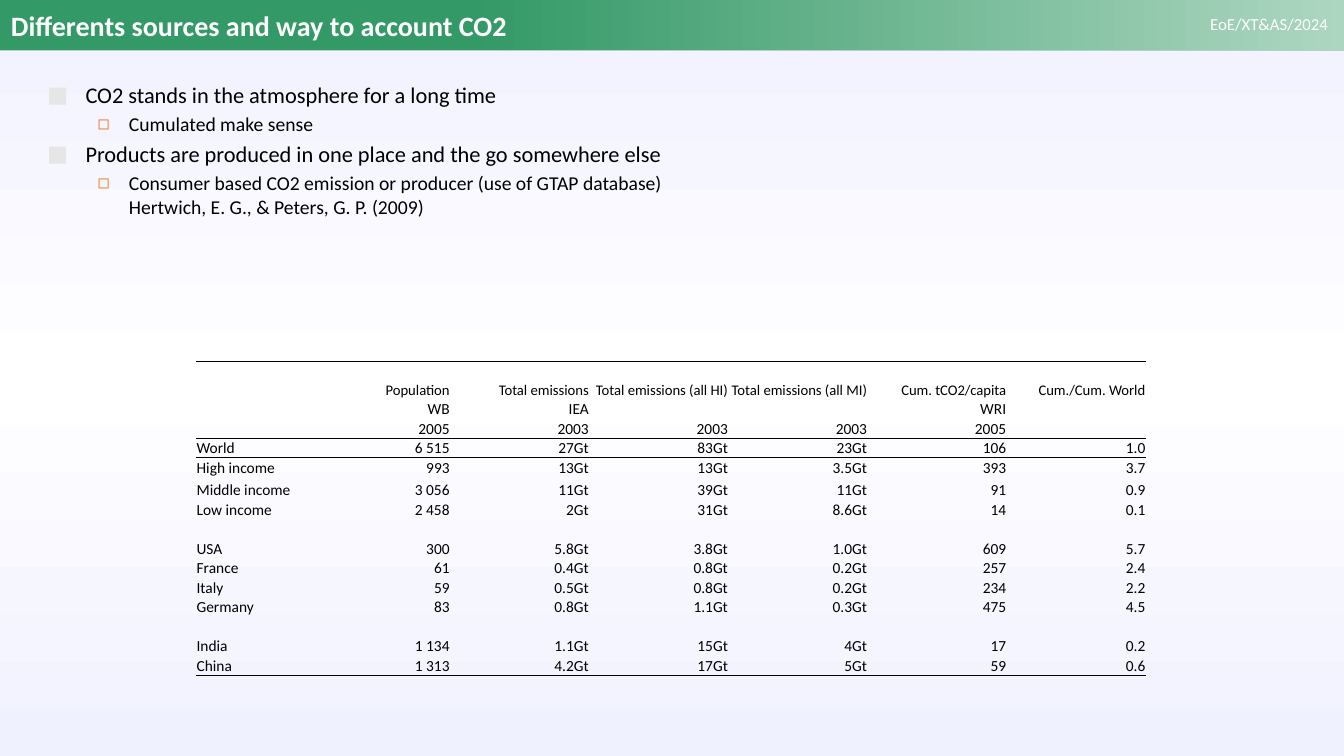
import pptx
import pptx.util
import pptx.dml.color
import pptx.enum.shapes
import pptx.enum.text
import pptx.oxml.ns
import lxml.etree

HUES = {"green": "339966", "mint": "ADD6C1", "white": "FFFFFF", "black": "000000",
        "lilac": "F0F1FE", "grey": "E7E6E6", "orange": "ED7D31"}
FACE = "Calibri"
TITLE = "Differents sources and way to account CO2"
MARK = "EoE/XT&AS/2024"
POINTS = [
    (0, ["CO2 stands in the atmosphere for a long time"]),
    (1, ["Cumulated make sense"]),
    (0, ["Products are produced in one place and the go somewhere else"]),
    (1, ["Consumer based CO2 emission or producer (use of GTAP database) ",
         "Hertwich, E. G., & Peters, G. P. (2009)"]),
]
LEVELS = [
    {"size": 16, "left": 0.38, "hang": -0.38, "gap": 3.2, "sign": "■", "hue": "grey"},
    {"size": 14, "left": 0.81, "hang": -0.31, "gap": 2.8, "sign": "◻", "hue": "orange"},
]
ROWS = [
    ("", "Population", "Total emissions", "Total emissions (all HI)",
     "Total emissions (all MI)", "Cum. tCO2/capita", "Cum./Cum. World"),
    ("", "WB", "IEA", "", "", "WRI", ""),
    ("", "2005", "2003", "2003", "2003", "2005", ""),
    ("World", "6 515", "27Gt", "83Gt", "23Gt", "106", "1.0"),
    ("High income", "993", "13Gt", "13Gt", "3.5Gt", "393", "3.7"),
    ("Middle income", "3 056", "11Gt", "39Gt", "11Gt", "91", "0.9"),
    ("Low income", "2 458", "2Gt", "31Gt", "8.6Gt", "14", "0.1"),
    ("",) * 7,
    ("USA", "300", "5.8Gt", "3.8Gt", "1.0Gt", "609", "5.7"),
    ("France", "61", "0.4Gt", "0.8Gt", "0.2Gt", "257", "2.4"),
    ("Italy", "59", "0.5Gt", "0.8Gt", "0.2Gt", "234", "2.2"),
    ("Germany", "83", "0.8Gt", "1.1Gt", "0.3Gt", "475", "4.5"),
    ("",) * 7,
    ("India", "1 134", "1.1Gt", "15Gt", "4Gt", "17", "0.2"),
    ("China", "1 313", "4.2Gt", "17Gt", "5Gt", "59", "0.6"),
]
RULES = {0: ["T"], 2: ["B"], 3: ["T"], 14: ["B"]}
TALL = {0: 0.37, 5: 0.22}
WIDE = [1.15] + [1.38] * 6
PLAIN = "{2D5ABB26-0587-4C30-8999-92F81FD0307C}"

Inches = pptx.util.Inches
Pt = pptx.util.Pt
ALIGN = pptx.enum.text.PP_ALIGN
ANCHOR = pptx.enum.text.MSO_ANCHOR
qn = pptx.oxml.ns.qn


def rgb(hue):
    return pptx.dml.color.RGBColor.from_string(HUES[hue])


def node(up, tag, **keys):
    return lxml.etree.SubElement(up, qn(tag), **keys)


def write(para, text, size, hue="black", bold=False):
    run = para.add_run()
    run.text = text
    font = run.font
    font.name, font.size, font.bold = FACE, Pt(size), bold
    font.color.rgb = rgb(hue)


def shade(fill, root, stops, angle):
    fill.gradient()
    fill.gradient_angle = angle
    ramp = root.find(".//" + qn("a:gsLst"))
    ramp.clear()
    for place, hue in stops:
        stop = node(ramp, "a:gs", pos=str(place * 1000))
        node(stop, "a:srgbClr", val=HUES[hue])


def band(slide, left, width):
    bar = slide.shapes.add_shape(pptx.enum.shapes.MSO_SHAPE.RECTANGLE,
                                 Inches(left), 0, Inches(width), Inches(0.5))
    bar.shadow.inherit = False
    bar.line.fill.background()
    bar.fill.solid()
    bar.fill.fore_color.rgb = rgb("green")
    return bar


def label(slide, box, wrap=True):
    frame = slide.shapes.add_textbox(*map(Inches, box)).text_frame
    frame.word_wrap = wrap
    return frame


def bullets(frame):
    for i, (depth, lines) in enumerate(POINTS):
        look = LEVELS[depth]
        para = frame.add_paragraph() if i else frame.paragraphs[0]
        para.level = depth
        if i:
            para.space_before = Pt(look["gap"])
        props = para._p.get_or_add_pPr()
        props.set("marL", str(Inches(look["left"])))
        props.set("indent", str(Inches(look["hang"])))
        node(node(props, "a:buClr"), "a:srgbClr", val=HUES[look["hue"]])
        node(props, "a:buFont", typeface=FACE)
        node(props, "a:buChar", char=look["sign"])
        for j, line in enumerate(lines):
            if j:
                para.add_line_break()
            write(para, line, look["size"])


def rule(cell, side):
    line = lxml.etree.Element(qn("a:ln" + side), w=str(Pt(0.75)))
    node(node(line, "a:solidFill"), "a:srgbClr", val=HUES["black"])
    cell._tc.get_or_add_tcPr().insert(0, line)


def grid(slide):
    tall = [TALL.get(i, 0.19) for i in range(len(ROWS))]
    box = map(Inches, (1.94, 3.59, sum(WIDE), sum(tall)))
    table = slide.shapes.add_table(len(ROWS), len(WIDE), *box).table
    table.first_row = table.horz_banding = False
    table._tbl.tblPr.find(qn("a:tableStyleId")).text = PLAIN
    for col, width in zip(table.columns, WIDE):
        col.width = Inches(width)
    for i, texts in enumerate(ROWS):
        table.rows[i].height = Inches(tall[i])
        size = 11 if i else 10.5
        for j, text in enumerate(texts):
            cell = table.cell(i, j)
            cell.margin_left = cell.margin_right = cell.margin_top = Inches(0.01)
            cell.margin_bottom = 0
            cell.vertical_anchor = ANCHOR.BOTTOM
            cell.fill.background()
            para = cell.text_frame.paragraphs[0]
            para.alignment = ALIGN.RIGHT if j else ALIGN.LEFT
            if text:
                write(para, text, size)
            else:
                node(para._p, "a:endParaRPr", sz=str(int(size * 100)))
            for side in RULES.get(i, []):
                rule(cell, side)


def main():
    deck = pptx.Presentation()
    deck.slide_width, deck.slide_height = Inches(13.33), Inches(7.5)
    slide = deck.slides.add_slide(deck.slide_layouts[6])
    shade(slide.background.fill, slide.element,
          [(0, "lilac"), (50, "white"), (100, "lilac")], 90)
    band(slide, 0, 13.33)
    fade = band(slide, 4.67, 8.66)
    shade(fade.fill, fade.element, [(0, "green"), (100, "mint")], 0)

    para = label(slide, (11.81, 0.09, 1.46, 0.31)).paragraphs[0]
    para.alignment = ALIGN.RIGHT
    write(para, MARK, 12, "white")

    head = label(slide, (0.01, 0, 12, 0.5))
    head.vertical_anchor = ANCHOR.MIDDLE
    write(head.paragraphs[0], TITLE, 20, "white", True)

    bullets(label(slide, (0.37, 0.76, 12.6, 6.61)))
    grid(slide)
    deck.save("out.pptx")


if __name__ == "__main__":
    main()
